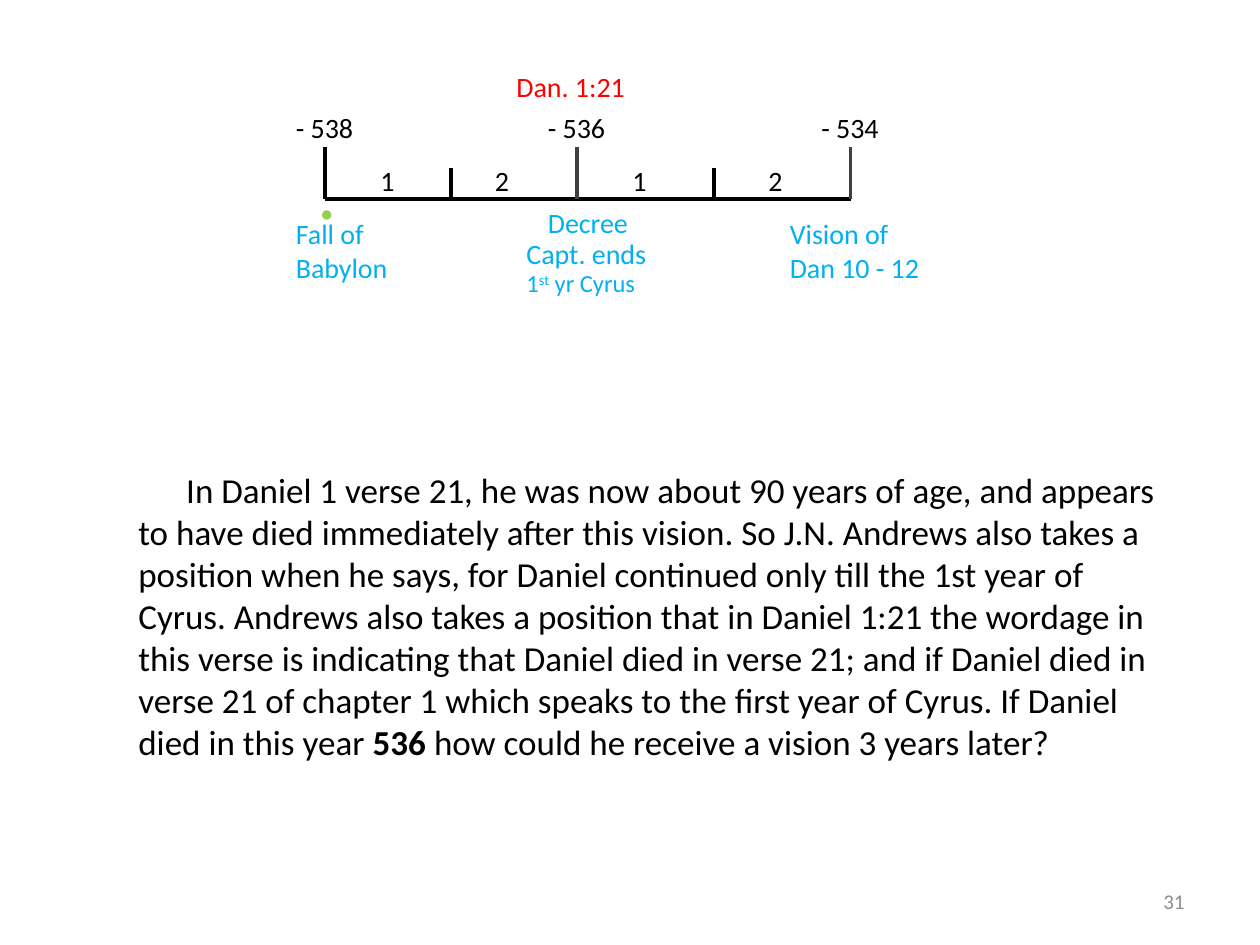
import pptx
import pptx.util
import pptx.dml.color
import pptx.enum.shapes
import pptx.enum.text
import lxml.etree

Inches, Pt = pptx.util.Inches, pptx.util.Pt
ALIGN = pptx.enum.text.PP_ALIGN
ANCHOR = pptx.enum.text.MSO_ANCHOR

THEME = {
    "font": "Calibri",
    "black": "000000", "gray": "404040", "blue": "00B0F0",
    "red": "FF0000", "green": "92D050", "pale": "8C8C8C",
    "body": 20, "label": 16, "small": 14, "foot": 12, "dot": 44,
    "line": 2.25,
}

# Content: runs are (text, style), style "b" for bold, "sup" for raised
BODY = [
    ("In Daniel 1 verse 21, he was now about 90 years of age, and appears to "
     "have died immediately after this vision. So J.N. Andrews also takes a "
     "position when he says, for Daniel continued only till the 1st year of "
     "Cyrus. Andrews also takes a position that in Daniel 1:21 the wordage in "
     "this verse is indicating that Daniel died in verse 21; and if Daniel "
     "died in verse 21 of chapter 1 which speaks to the first year of Cyrus. "
     "If Daniel died in this year", ""),
    (" 536 ", "b"),
    ("how could he receive a vision 3 years later?", ""),
]
REIGN = [("1", ""), ("st", "sup"), (" yr Cyrus", "")]

# Timeline: tick x, tick height, colour
AXIS = 1.58
TICKS = [
    (2.58, 0.41, "black"), (3.58, 0.25, "black"), (4.58, 0.41, "gray"),
    (5.67, 0.25, "black"), (6.75, 0.41, "gray"),
]

# Label rows: top, height, colour, size, then (left, width, runs)
ROWS = [
    (0.5, 0.37, "red", "label", [(4, 2.25, "Dan. 1:21")]),
    (0.83, 0.37, "black", "label",
     [(2.25, 2.5, "- 538"), (4.25, 2.67, "- 536"), (6.42, 1.75, "- 534")]),
    (1.25, 0.37, "black", "label",
     [(2.92, 0.33, "1"), (3.83, 0.42, "2"), (4.92, 0.58, "1"), (6, 1.33, "2")]),
    (1.08, 0.84, "green", "dot", [(2.42, 0.42, ".")]),
    (1.58, 0.37, "blue", "label", [(4.25, 1.25, "Decree")]),
    (1.67, 0.64, "blue", "label",
     [(2.25, 1.5, "Fall of Babylon"), (6.17, 1.25, "Vision of Dan 10 - 12")]),
    (1.83, 0.37, "blue", "label", [(4.08, 1.92, "Capt. ends")]),
    (2.08, 0.34, "blue", "small", [(4.08, 1.67, REIGN)]),
]


def tint(name):
    return pptx.dml.color.RGBColor.from_string(THEME[name])


def add_text(slide, box, runs, color, size):
    shape = slide.shapes.add_textbox(*map(Inches, box))
    frame = shape.text_frame
    frame.word_wrap = True
    para = frame.paragraphs[0]
    for text, style in [(runs, "")] if isinstance(runs, str) else runs:
        run = para.add_run()
        run.text = text
        font = run.font
        font.name, font.size = THEME["font"], Pt(THEME[size])
        font.color.rgb = tint(color)
        font.bold = style == "b"
        if style == "sup":
            run._r.get_or_add_rPr().set("baseline", "30000")
    return frame


def add_line(slide, start, end, color):
    line = slide.shapes.add_connector(
        pptx.enum.shapes.MSO_CONNECTOR.STRAIGHT, *map(Inches, start + end))
    line.line.color.rgb = tint(color)
    line.line.width = Pt(THEME["line"])
    lxml.etree.SubElement(line._element.spPr, pptx.oxml.ns.qn("a:effectLst"))


def main():
    deck = pptx.Presentation()
    deck.slide_width, deck.slide_height = Inches(10), Inches(7.5)
    slide = deck.slides.add_slide(deck.slide_layouts[6])

    # Commentary with a first-line indent
    frame = add_text(slide, (1, 3.67, 8.33, 2.46), BODY, "black", "body")
    props = frame.paragraphs[0]._p.get_or_add_pPr()
    props.set("indent", str(Inches(0.38)))

    # Time axis and ticks
    add_line(slide, (TICKS[0][0], AXIS), (TICKS[-1][0], AXIS), "black")
    for x, rise, color in TICKS:
        add_line(slide, (x, AXIS), (x, AXIS - rise), color)

    # Years, counts and events
    for top, height, color, size, cells in ROWS:
        for left, width, runs in cells:
            add_text(slide, (left, top, width, height), runs, color, size)

    # Page number
    frame = add_text(slide, (7.17, 6.95, 2.33, 0.4), "31", "pale", "foot")
    frame.vertical_anchor = ANCHOR.MIDDLE
    frame.paragraphs[0].alignment = ALIGN.RIGHT

    deck.save("out.pptx")


if __name__ == "__main__":
    main()
